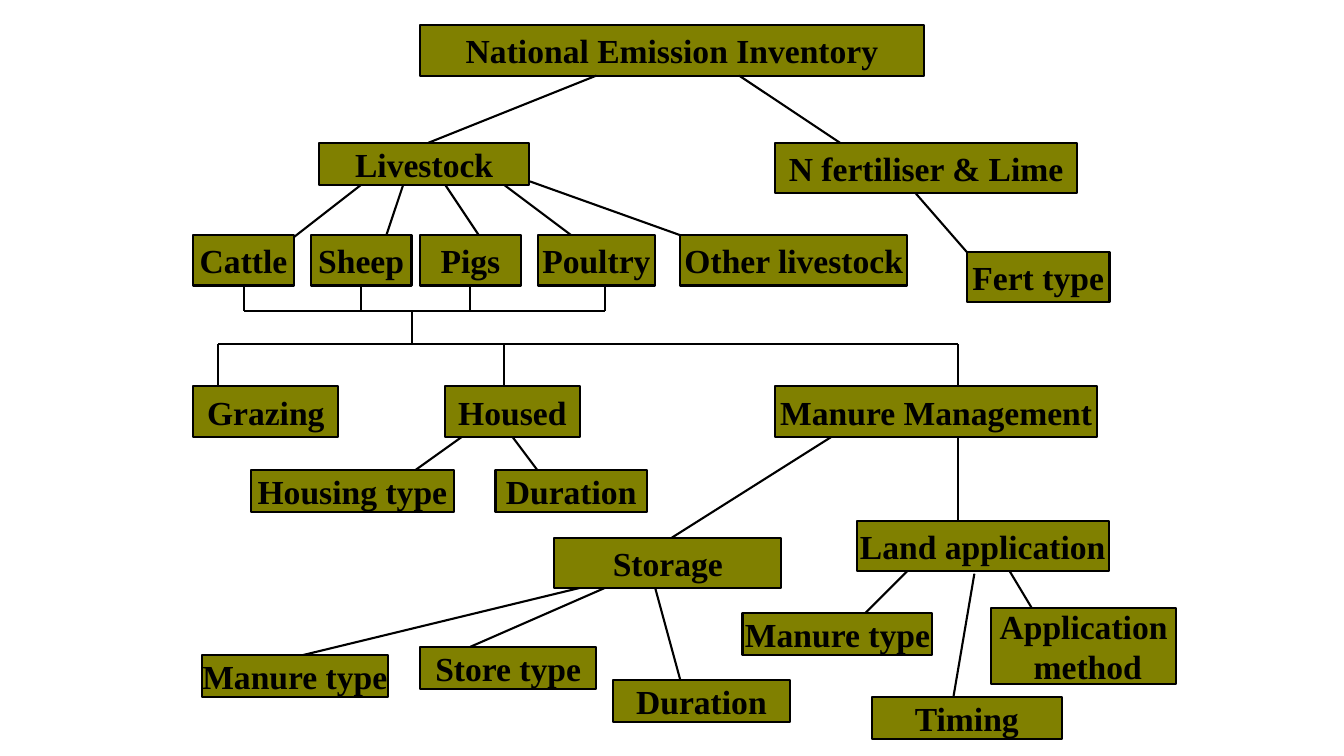
from dataclasses import dataclass

from lxml import etree
from pptx import Presentation
from pptx.dml.color import RGBColor
from pptx.enum.shapes import MSO_CONNECTOR, MSO_SHAPE
from pptx.enum.text import MSO_ANCHOR, MSO_AUTO_SIZE, PP_ALIGN
from pptx.oxml.ns import qn
from pptx.util import Inches, Pt

RECT = MSO_SHAPE.RECTANGLE
STRAIGHT = MSO_CONNECTOR.STRAIGHT
MIDDLE = MSO_ANCHOR.MIDDLE
FIXED = MSO_AUTO_SIZE.NONE
CENTER = PP_ALIGN.CENTER


@dataclass(frozen=True)
class Theme:
    fill: RGBColor = RGBColor(0x80, 0x80, 0x00)
    ink: RGBColor = RGBColor(0, 0, 0)
    font: str = "Times New Roman"
    size: int = Pt(24)
    line: int = Pt(1.5)


THEME = Theme()
UNIT = Inches(1 / 12)
COLS, ROWS = 160, 90

TITLE = ("National Emission Inventory", 50, 3, 60, 6)

# row, height, [(label, column, width)]
TIERS = [
    (17, 5, [("Livestock", 38, 25)]),
    (17, 6, [("N fertiliser & Lime", 92.3, 35.9)]),
    (28, 6, [("Cattle", 23, 12), ("Sheep", 37, 12), ("Pigs", 50, 12),
             ("Poultry", 64, 14), ("Other livestock", 81, 27)]),
    (30, 6, [("Fert type", 115.1, 17)]),
    (46, 6, [("Grazing", 23, 17.3), ("Housed", 53, 16),
             ("Manure Management", 92.3, 38.3)]),
    (56, 5, [("Housing type", 29.9, 24.1), ("Duration", 59, 18)]),
    (62, 6, [("Land application", 102, 30)]),
    (64, 6, [("Storage", 66, 27)]),
    (73, 5, [("Manure type", 88.4, 22.6)]),
    (72.4, 9, [("Application\n method", 118, 22)]),
    (77, 5, [("Store type", 50, 21)]),
    (78, 5, [("Manure type", 24, 22.2)]),
    (81, 5, [("Duration", 73, 21)]),
    (83, 5, [("Timing", 103.8, 22.6)]),
]

# start row, end row, [(start column, end column)]
LINKS = [
    (9, 17, [(71, 51), (88, 100)]),
    (22, 29, [(43, 34)]),
    (22, 28, [(48, 46), (53, 57), (60, 68)]),
    (21.6, 28.9, [(63.1, 83.5)]),
    (23, 30, [(109, 115.1)]),
    (34, 37, [(col, col) for col in (29, 43, 56, 72)]),
    (37, 37, [(29, 72)]),
    (37, 41, [(49, 49)]),
    (41, 41, [(26, 114)]),
    (41, 46, [(col, col) for col in (26, 60, 114)]),
    (52, 57, [(55, 48)]),
    (52, 56, [(61, 64)]),
    (52, 64, [(99, 80)]),
    (52, 62, [(114, 114)]),
    (68, 73, [(108, 103), (120.2, 123.2)]),
    (68.3, 83, [(116, 113.5)]),
    (70, 78, [(69, 36)]),
    (70, 77, [(72, 56)]),
    (70, 81, [(78, 81)]),
]


def grid(*cells):
    return [round(cell * UNIT) for cell in cells]


def style(shape, label):
    shape.fill.solid()
    shape.fill.fore_color.rgb = THEME.fill
    shape.line.color.rgb = THEME.ink
    shape.line.width = THEME.line
    frame = shape.text_frame
    frame.text = label
    frame.auto_size = FIXED
    frame.word_wrap = False
    frame.vertical_anchor = MIDDLE
    for para in frame.paragraphs:
        para.alignment = CENTER
        font = para.font
        font.name = THEME.font
        font.size = THEME.size
        font.bold = True
        font.color.rgb = THEME.ink


def add_title(slide, label, *cells):
    title = slide.shapes.title
    title.left, title.top, title.width, title.height = grid(*cells)
    style(title, label)


def add_box(slide, label, *cells):
    box = slide.shapes.add_shape(RECT, *grid(*cells))
    box.shadow.inherit = False
    style(box, label)


def add_link(slide, *cells):
    link = slide.shapes.add_connector(STRAIGHT, *grid(*cells))
    link.line.color.rgb = THEME.ink
    link.line.width = THEME.line
    etree.SubElement(link._element.spPr, qn("a:effectLst"))


def main():
    deck = Presentation()
    deck.slide_width, deck.slide_height = grid(COLS, ROWS)
    slide = deck.slides.add_slide(deck.slide_layouts[5])
    add_title(slide, *TITLE)
    for top, end, spans in LINKS:
        for start, stop in spans:
            add_link(slide, start, top, stop, end)
    for row, high, boxes in TIERS:
        for label, col, wide in boxes:
            add_box(slide, label, col, row, wide, high)
    deck.save("out.pptx")


if __name__ == "__main__":
    main()
